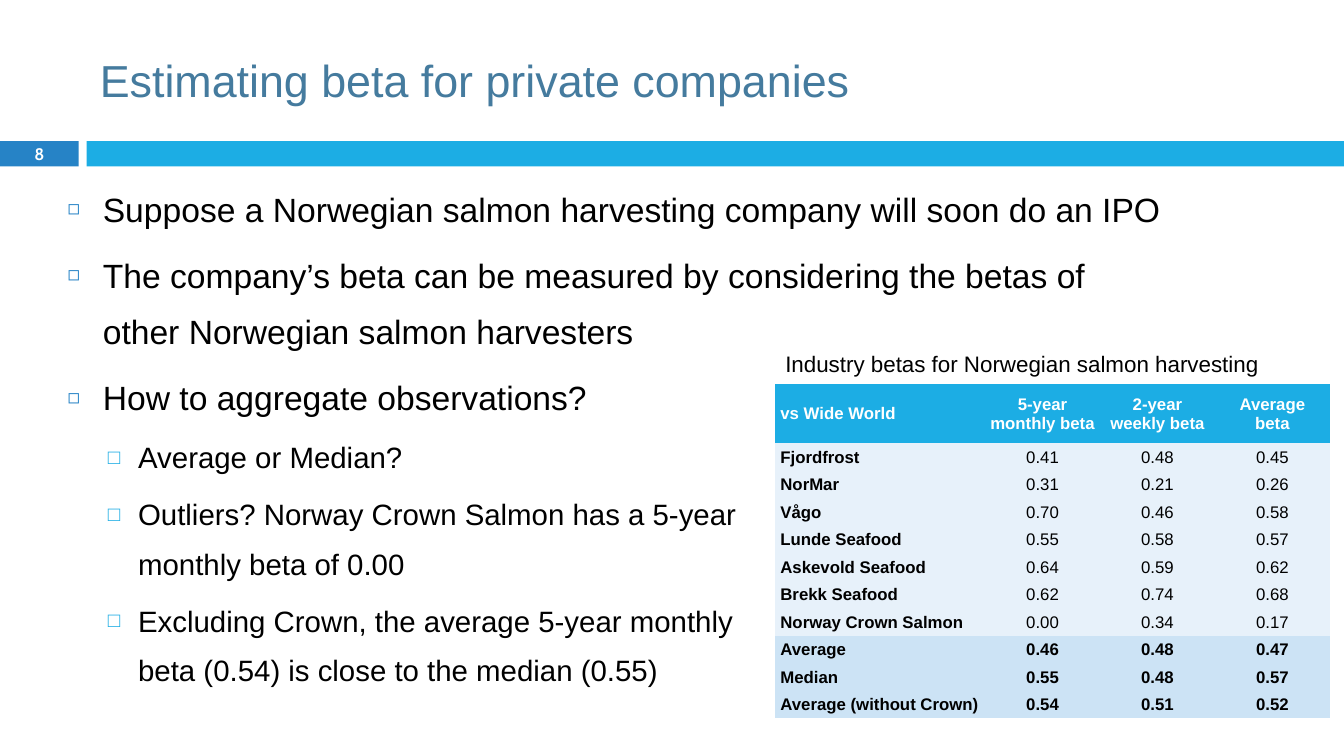
"""Build the slide on estimating beta for private companies."""
import lxml.etree
import pptx
import pptx.dml.color
import pptx.enum.shapes
import pptx.enum.text
import pptx.oxml.ns
import pptx.util

Inches = pptx.util.Inches
Pt = pptx.util.Pt
RGBColor = pptx.dml.color.RGBColor
ALIGN = pptx.enum.text.PP_ALIGN
ANCHOR = pptx.enum.text.MSO_ANCHOR

BLACK = RGBColor(0x00, 0x00, 0x00)
WHITE = RGBColor(0xFF, 0xFF, 0xFF)
TITLE_BLUE = RGBColor(0x45, 0x7B, 0x9E)
DARK_BLUE = RGBColor(0x26, 0x83, 0xC6)
BRIGHT_BLUE = RGBColor(0x1C, 0xAD, 0xE4)
PALE_BLUE = RGBColor(0xE7, 0xF1, 0xFA)
SUMMARY_BLUE = RGBColor(0xCC, 0xE3, 0xF5)
NO_GRID_STYLE = "{2D5ABB26-0587-4C30-8999-92F81FD0307C}"

POINTS = [
    (0, "Suppose a Norwegian salmon harvesting company will soon do an IPO"),
    (0, "The company’s beta can be measured by considering the betas of "
        "other Norwegian salmon harvesters"),
    (0, "How to aggregate observations?"),
    (1, "Average or Median?"),
    (1, "Outliers? Norway Crown Salmon has a 5-year\nmonthly beta of 0.00"),
    (1, "Excluding Crown, the average 5-year monthly\n"
        "beta (0.54) is close to the median (0.55)"),
]
LEVELS = [
    dict(size=24, before=7, left=0.35, hanging=0.35, mark="◻", mark_color=DARK_BLUE, mark_size=60),
    dict(size=21, before=5.5, left=0.7, hanging=0.3, mark="□", mark_color=BRIGHT_BLUE, mark_size=70),
]
HEADER = ["vs Wide World", "5-year monthly beta", "2-year weekly beta", "Average beta"]
COMPANIES = [
    ("Fjordfrost", "0.41", "0.48", "0.45"),
    ("NorMar", "0.31", "0.21", "0.26"),
    ("Vågo", "0.70", "0.46", "0.58"),
    ("Lunde Seafood", "0.55", "0.58", "0.57"),
    ("Askevold Seafood", "0.64", "0.59", "0.62"),
    ("Brekk Seafood", "0.62", "0.74", "0.68"),
    ("Norway Crown Salmon", "0.00", "0.34", "0.17"),
]
SUMMARIES = [
    ("Average", "0.46", "0.48", "0.47"),
    ("Median", "0.55", "0.48", "0.57"),
    ("Average (without Crown)", "0.54", "0.51", "0.52"),
]


def write(para, text, size=12, color=BLACK, bold=False, font="Arial", align=ALIGN.LEFT):
    """Put formatted text in a paragraph, with a line break at each newline."""
    para.alignment = align
    for number, line in enumerate(text.split("\n")):
        if number:
            para.add_line_break()
        span = para.add_run()
        span.text = line
        span.font.name = font
        span.font.size = Pt(size)
        span.font.bold = bold
        span.font.color.rgb = color


def place(shape, left, top, width, height):
    """Move and size a shape, in inches."""
    shape.left, shape.top = Inches(left), Inches(top)
    shape.width, shape.height = Inches(width), Inches(height)


def add_bar(page, left, width, color):
    """Draw one part of the band below the title."""
    bar = page.shapes.add_shape(pptx.enum.shapes.MSO_SHAPE.RECTANGLE, Inches(left),
                                Inches(1.4), Inches(width), Inches(0.25))
    bar.shadow.inherit = False
    bar.fill.solid()
    bar.fill.fore_color.rgb = color
    bar.line.fill.background()
    return bar


def add_number(bar, text):
    """Write the slide number in its bar."""
    frame = bar.text_frame
    frame.margin_top = frame.margin_bottom = 0
    frame.vertical_anchor = ANCHOR.MIDDLE
    write(frame.paragraphs[0], text, size=11.9, color=WHITE, bold=True,
          font="Cabin", align=ALIGN.CENTER)


def fill_title(title, text):
    """Format the title placeholder."""
    place(title, 0.89, 0.25, 11.89, 1.08)
    title.text_frame.vertical_anchor = ANCHOR.MIDDLE
    write(title.text_frame.paragraphs[0], text, size=32, color=TITLE_BLUE)


def set_bullet(para, left, hanging, mark, mark_color, mark_size):
    """Give a paragraph its indent and bullet."""
    properties = para._p.get_or_add_pPr()
    properties.set("marL", str(Inches(left)))
    properties.set("indent", str(-Inches(hanging)))
    qn = pptx.oxml.ns.qn
    color = lxml.etree.SubElement(properties, qn("a:buClr"))
    lxml.etree.SubElement(color, qn("a:srgbClr"), val=str(mark_color))
    lxml.etree.SubElement(properties, qn("a:buSzPct"), val=str(mark_size * 1000))
    lxml.etree.SubElement(properties, qn("a:buFont"), typeface="Arial")
    lxml.etree.SubElement(properties, qn("a:buChar"), char=mark)


def fill_body(body, points):
    """Write the two-level list in the body placeholder."""
    place(body, 0.57, 1.66, 11.05, 5.39)
    frame = body.text_frame
    frame.auto_size = pptx.enum.text.MSO_AUTO_SIZE.NONE
    frame.vertical_anchor = ANCHOR.TOP
    for number, (level, text) in enumerate(points):
        para = frame.add_paragraph() if number else frame.paragraphs[0]
        look = dict(LEVELS[level])
        para.level = level
        para.line_spacing = 1.4
        para.space_before = Pt(look.pop("before"))
        para.space_after = Pt(0)
        write(para, text, size=look.pop("size"))
        set_bullet(para, **look)


def add_caption(page, text):
    """Place the caption above the table."""
    box = page.shapes.add_textbox(Inches(7.69), Inches(3.42), Inches(4.95), Inches(0.37))
    box.text_frame.word_wrap = False
    write(box.text_frame.paragraphs[0], text, size=16)


def fill_cell(cell, text, fill, **look):
    """Fill one table cell."""
    cell.fill.solid()
    cell.fill.fore_color.rgb = fill
    cell.margin_left = cell.margin_right = Inches(0.05)
    cell.margin_top = cell.margin_bottom = 0
    cell.vertical_anchor = ANCHOR.MIDDLE
    write(cell.text_frame.paragraphs[0], text, **look)


def add_beta_table(page):
    """Add the table of industry betas."""
    rows = [HEADER] + COMPANIES + SUMMARIES
    table = page.shapes.add_table(len(rows), len(HEADER), Inches(7.69), Inches(3.81),
                                  Inches(5.51), Inches(3.32)).table
    table._tbl.tblPr.find(pptx.oxml.ns.qn("a:tableStyleId")).text = NO_GRID_STYLE
    table.horz_banding = False
    for number, column in enumerate(table.columns):
        column.width = Inches(1.14 if number else 2.08)
    for number, values in enumerate(rows):
        is_header = number == 0
        is_summary = number > len(COMPANIES)
        table.rows[number].height = Inches(0.59 if is_header else 2.73 / (len(rows) - 1))
        fill = BRIGHT_BLUE if is_header else SUMMARY_BLUE if is_summary else PALE_BLUE
        for place_in_row, text in enumerate(values):
            is_name = place_in_row == 0
            fill_cell(table.cell(number, place_in_row), text, fill,
                      color=WHITE if is_header else BLACK,
                      bold=is_header or is_summary or is_name,
                      align=ALIGN.LEFT if is_name else ALIGN.CENTER)


def main():
    """Build and save the deck."""
    deck = pptx.Presentation()
    deck.slide_width, deck.slide_height = Inches(13.33), Inches(7.5)
    page = deck.slides.add_slide(deck.slide_layouts[1])
    fill_title(page.shapes.title, "Estimating beta for private companies")
    fill_body(page.placeholders[1], POINTS)
    add_number(add_bar(page, 0, 0.78, DARK_BLUE), "8")
    add_bar(page, 0.86, 12.47, BRIGHT_BLUE)
    add_caption(page, "Industry betas for Norwegian salmon harvesting")
    add_beta_table(page)
    deck.save("out.pptx")


if __name__ == "__main__":
    main()
